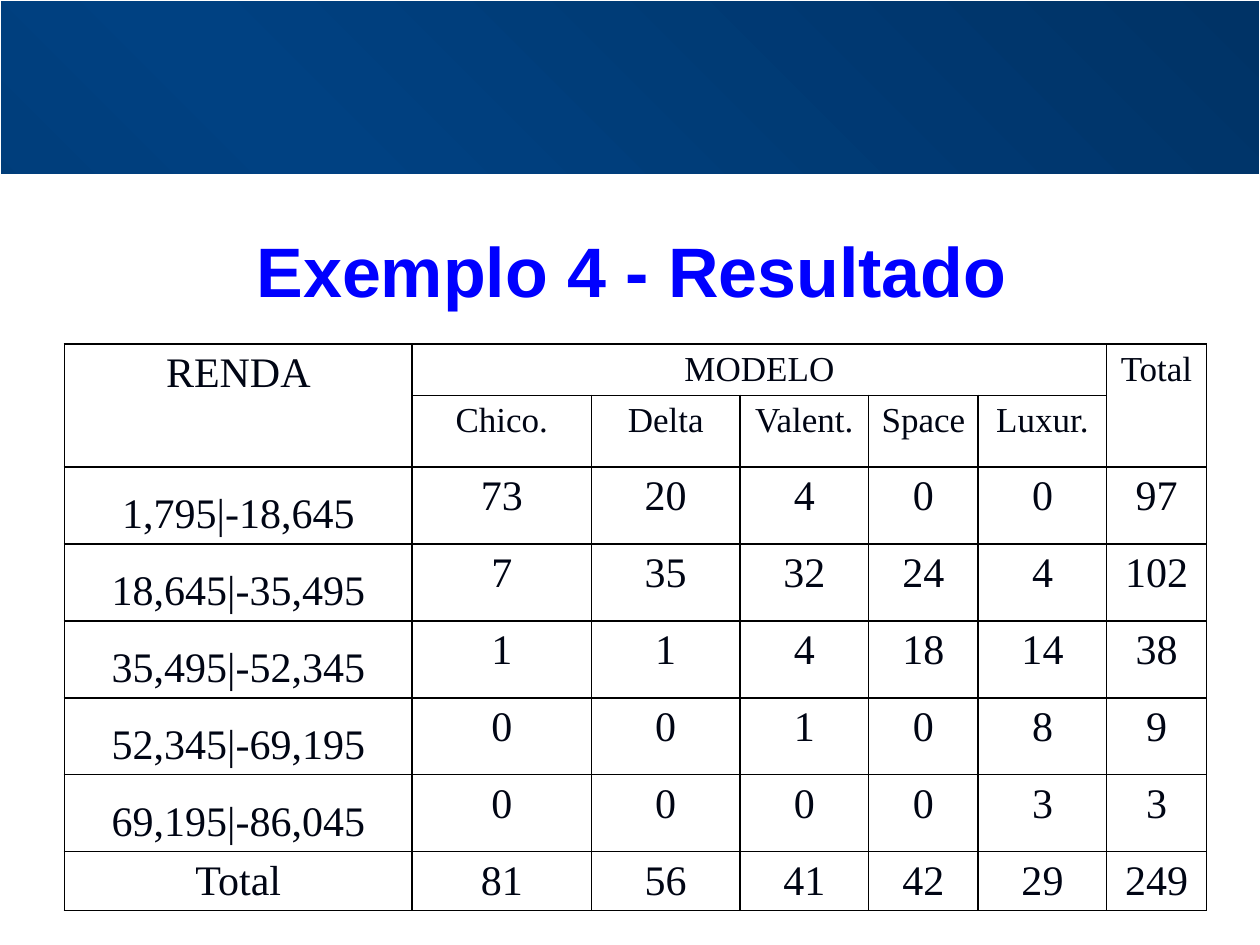
"""Build the slide that crosses income bands with car models."""
from dataclasses import dataclass

from lxml.etree import SubElement
from pptx import Presentation
from pptx.dml.color import RGBColor
from pptx.enum.shapes import MSO_SHAPE
from pptx.enum.text import MSO_ANCHOR, PP_ALIGN
from pptx.oxml.ns import qn
from pptx.shapes.autoshape import Shape
from pptx.slide import Slide
from pptx.table import Table, _Cell
from pptx.text.text import _Paragraph
from pptx.util import Cm, Pt

COLORS = {
    "edge": "003366",
    "middle": "004182",
    "white": "FFFFFF",
    "title": "0000FF",
    "text": "000514",
    "border": "000000",
}
COLUMN_WIDTHS = [7.01, 3.61, 3, 2.59, 2.21, 2.59, 2.01]
ROW_HEIGHTS = [0.94, 1.45] + [1.55] * 5 + [0.94]
MODELS = ["Chico.", "Delta", "Valent.", "Space", "Luxur."]


@dataclass
class IncomeRow:
    label: str
    counts: list[int]
    anchor: MSO_ANCHOR = MSO_ANCHOR.BOTTOM


INCOME_ROWS = [
    IncomeRow("1,795|-18,645", [73, 20, 4, 0, 0, 97]),
    IncomeRow("18,645|-35,495", [7, 35, 32, 24, 4, 102]),
    IncomeRow("35,495|-52,345", [1, 1, 4, 18, 14, 38]),
    IncomeRow("52,345|-69,195", [0, 0, 1, 0, 8, 9]),
    IncomeRow("69,195|-86,045", [0, 0, 0, 0, 3, 3]),
    IncomeRow("Total", [81, 56, 41, 42, 29, 249], MSO_ANCHOR.TOP),
]


def rgb(name: str) -> RGBColor:
    return RGBColor.from_string(COLORS[name])


def format_paragraph(paragraph: _Paragraph, font: str, size: int, color: str, bold: bool = False) -> None:
    paragraph.alignment = PP_ALIGN.CENTER
    paragraph.font.name = font
    paragraph.font.size = Pt(size)
    paragraph.font.bold = bold
    paragraph.font.color.rgb = rgb(color)


def add_rectangle(slide: Slide, top: float, height: float) -> Shape:
    shape = slide.shapes.add_shape(MSO_SHAPE.RECTANGLE, Cm(0), Cm(top), Cm(25.4), Cm(height))
    shape.shadow.inherit = False
    shape.line.color.rgb = rgb("white")
    shape.line.width = Pt(0.75)
    return shape


def fill_gradient(shape: Shape, stops: dict[int, str]) -> None:
    shape.fill.gradient()
    shape.fill.gradient_angle = 45
    stop_list = shape.fill._xPr.find(f".//{qn('a:gsLst')}")
    for old_stop in list(stop_list):
        stop_list.remove(old_stop)
    for percent, color in stops.items():
        stop = SubElement(stop_list, qn("a:gs"), pos=str(percent * 1000))
        SubElement(stop, qn("a:srgbClr"), val=COLORS[color])


def add_title(slide: Slide, text: str) -> None:
    title = slide.shapes.title
    title.left, title.top, title.width, title.height = Cm(1.3), Cm(4.32), Cm(22.86), Cm(2.21)
    title.text_frame.text = text
    title.text_frame.vertical_anchor = MSO_ANCHOR.MIDDLE
    format_paragraph(title.text_frame.paragraphs[0], "Arial", 40, "title", bold=True)


def style_cell(cell: _Cell) -> None:
    properties = cell._tc.get_or_add_tcPr()
    for side in ("lnL", "lnR", "lnT", "lnB"):
        border = SubElement(properties, qn(f"a:{side}"), w=str(Pt(1)))
        fill = SubElement(border, qn("a:solidFill"))
        SubElement(fill, qn("a:srgbClr"), val=COLORS["border"])
    cell.fill.background()


def write_cell(cell: _Cell, text: str, size: int = 24, anchor: MSO_ANCHOR = MSO_ANCHOR.TOP) -> None:
    cell.text = text
    cell.vertical_anchor = anchor
    format_paragraph(cell.text_frame.paragraphs[0], "Times New Roman", size, "text")


def add_income_table(slide: Slide) -> Table:
    frame = slide.shapes.add_table(
        len(ROW_HEIGHTS), len(COLUMN_WIDTHS),
        Cm(1.3), Cm(6.93), Cm(sum(COLUMN_WIDTHS)), Cm(sum(ROW_HEIGHTS)),
    )
    table = frame.table
    table.first_row = table.horz_banding = False
    for column, width in zip(table.columns, COLUMN_WIDTHS):
        column.width = Cm(width)
    for row, height in zip(table.rows, ROW_HEIGHTS):
        row.height = Cm(height)
    for cell in table.iter_cells():
        style_cell(cell)

    table.cell(0, 0).merge(table.cell(1, 0))
    table.cell(0, 1).merge(table.cell(0, 5))
    table.cell(0, 6).merge(table.cell(1, 6))
    write_cell(table.cell(0, 0), "RENDA")
    write_cell(table.cell(0, 1), "MODELO", 20)
    write_cell(table.cell(0, 6), "Total", 20)
    for column_index, model in enumerate(MODELS, start=1):
        write_cell(table.cell(1, column_index), model, 20)
    for row_index, income in enumerate(INCOME_ROWS, start=2):
        write_cell(table.cell(row_index, 0), income.label, anchor=income.anchor)
        for column_index, count in enumerate(income.counts, start=1):
            write_cell(table.cell(row_index, column_index), str(count))
    return table


def main() -> None:
    presentation = Presentation()
    presentation.slide_width, presentation.slide_height = Cm(25.4), Cm(19.05)
    slide = presentation.slides.add_slide(presentation.slide_layouts[5])

    backdrop = add_rectangle(slide, 0, 19.05)
    fill_gradient(backdrop, {0: "edge", 50: "middle", 100: "edge"})
    panel = add_rectangle(slide, 3.53, 15.52)
    panel.fill.solid()
    panel.fill.fore_color.rgb = rgb("white")

    add_title(slide, "Exemplo 4 - Resultado")
    panel._element.addnext(slide.shapes.title._element)
    add_income_table(slide)
    presentation.save("out.pptx")


if __name__ == "__main__":
    main()
